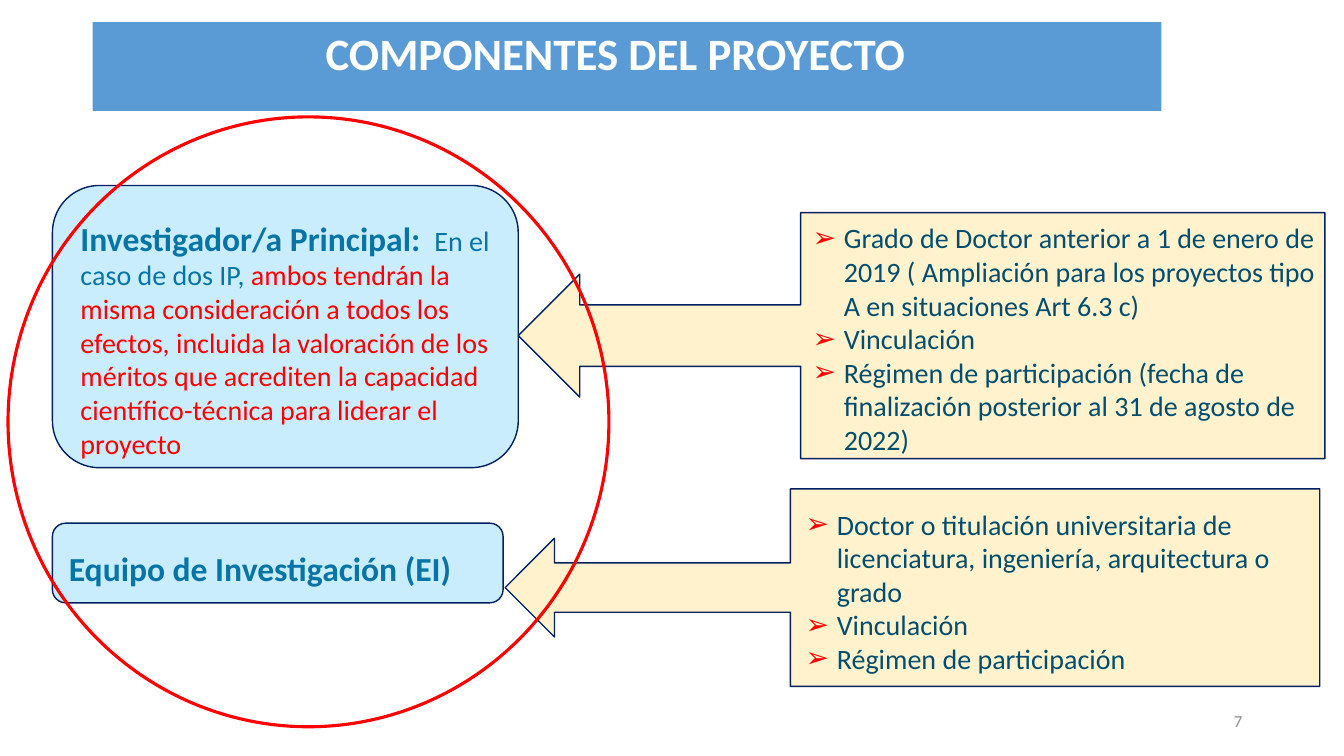
from pptx import Presentation
from pptx.dml.color import RGBColor
from pptx.enum.shapes import MSO_SHAPE
from pptx.enum.text import MSO_ANCHOR, MSO_AUTO_SIZE, PP_ALIGN
from pptx.oxml.ns import qn
from pptx.util import Inches, Pt
from lxml.etree import SubElement

COLORS = {
    "bar": "5B9BD5", "white": "FFFFFF", "role_fill": "C9EDFD", "navy": "002060",
    "role_text": "0774A6", "red": "FF0000", "callout": "FFF2CC",
    "list_text": "044D6E", "number": "8C8C8C",
}
FONT = "Calibri"


def color(name):
    return RGBColor.from_string(COLORS[name])


def place(sp, box):
    sp.left, sp.top, sp.width, sp.height = [Inches(v) for v in box]


def add_box(s, kind, box, fill=None, line=None, width=1):
    sp = s.shapes.add_shape(kind, *[Inches(v) for v in box])
    sp.shadow.inherit = False
    if fill:
        sp.fill.solid()
        sp.fill.fore_color.rgb = color(fill)
    else:
        sp.fill.background()
    if line:
        sp.line.color.rgb = color(line)
        sp.line.width = Pt(width)
    else:
        sp.line.fill.background()
    return sp


def add_bullet(p):
    pPr = p._p.get_or_add_pPr()
    pPr.set("marL", str(Inches(0.31)))
    pPr.set("indent", str(-Inches(0.31)))
    SubElement(SubElement(pPr, qn("a:buClr")), qn("a:srgbClr"), val=COLORS["red"])
    SubElement(pPr, qn("a:buFont"), typeface="Arial")
    SubElement(pPr, qn("a:buChar"), char="➢")


def write(sp, paragraphs, size=20, fill="list_text", bold=False, align=PP_ALIGN.LEFT,
          anchor=MSO_ANCHOR.TOP, spacing=1.0, bullet=False):
    tf = sp.text_frame
    tf.word_wrap = True
    tf.auto_size = MSO_AUTO_SIZE.NONE
    tf.vertical_anchor = anchor
    for i, runs in enumerate(paragraphs):
        p = tf.paragraphs[0] if i == 0 else tf.add_paragraph()
        p.alignment = align
        p.line_spacing = spacing
        p.space_before = Pt(0)
        if bullet:
            add_bullet(p)
        for text, fmt in runs:
            r = p.add_run()
            r.text = text
            r.font.name = FONT
            r.font.size = Pt(fmt.get("size", size))
            r.font.bold = fmt.get("bold", bold)
            r.font.color.rgb = color(fmt.get("fill", fill))


def add_text(s, box, paragraphs, **fmt):
    sp = s.shapes.add_textbox(*[Inches(v) for v in box])
    write(sp, paragraphs, **fmt)


def add_header(s, box, text):
    x, y, w, h = box
    bar = add_box(s, MSO_SHAPE.RECTANGLE, box, "bar")
    title = s.shapes.title
    title._element.addprevious(bar._element)
    place(title, (x - 0.61, y + 0.07, w + 0.99, h - 0.22))
    write(title, [[(text, {})]], size=32, fill="white", bold=True,
          align=PP_ALIGN.CENTER, spacing=0.85)


def add_role(s, box, text_box, runs, **fmt):
    x, y, w, h = box
    dx, dy, tw, th = text_box
    add_box(s, MSO_SHAPE.ROUNDED_RECTANGLE, box, "role_fill", "navy")
    add_text(s, (x + dx, y + dy, tw, th), [runs], fill="role_text", **fmt)


def add_requirements(s, body, box, text_box, items):
    x, y, w, h = box
    dx, dy, tw, th = text_box
    callout = add_box(s, MSO_SHAPE.LEFT_ARROW_CALLOUT, box, "callout", "navy")
    body._element.addprevious(callout._element)
    place(body, (x + dx, y + dy, tw, th))
    write(body, [[(item, {})] for item in items], bullet=True)


def build_components(s):
    first_list, second_list = [ph for ph in s.placeholders if ph.placeholder_format.idx]
    add_header(s, (0.92, 0.22, 10.6, 0.88), "COMPONENTES DEL PROYECTO")
    add_role(s, (0.52, 1.84, 4.62, 2.8), (0.18, 0.27, 4.54, 2.52), [
        ("Investigador/a Principal: ", {"size": 24, "bold": True}),
        (" En el caso de dos IP, ", {}),
        ("ambos tendrán la misma consideración a todos los efectos, incluida la "
         "valoración de los méritos que acrediten la capacidad científico-técnica "
         "para liderar el proyecto", {"fill": "red"}),
    ])
    add_role(s, (0.52, 5.19, 4.47, 0.79), (-0.14, 0.2, 4.4, 0.5),
             [("Equipo de Investigación (EI)", {})],
             size=24, bold=True, align=PP_ALIGN.CENTER)
    add_requirements(s, first_list, (5.14, 2.11, 8, 2.44), (2.82, 0.03, 5.22, 2.46), [
        "Grado de Doctor anterior a 1 de enero de 2019 ( Ampliación para los "
        "proyectos tipo A en situaciones Art 6.3 c)",
        "Vinculación",
        "Régimen de participación (fecha de finalización posterior al 31 de agosto de 2022)",
    ])
    add_requirements(s, second_list, (5.01, 4.85, 8.08, 1.96), (2.88, 0.13, 5.29, 1.78), [
        "Doctor o titulación universitaria de licenciatura, ingeniería, arquitectura o grado",
        "Vinculación",
        "Régimen de participación",
    ])
    add_box(s, MSO_SHAPE.OVAL, (0.08, 1.16, 5.96, 6.05), line="red", width=2.25)
    add_text(s, (9.42, 6.95, 3, 0.4), [[("7", {})]], size=12, fill="number",
             align=PP_ALIGN.RIGHT, anchor=MSO_ANCHOR.MIDDLE)


def main():
    prs = Presentation()
    prs.slide_width, prs.slide_height = Inches(13.33), Inches(7.5)
    build_components(prs.slides.add_slide(prs.slide_layouts[3]))
    prs.save("out.pptx")


if __name__ == "__main__":
    main()
